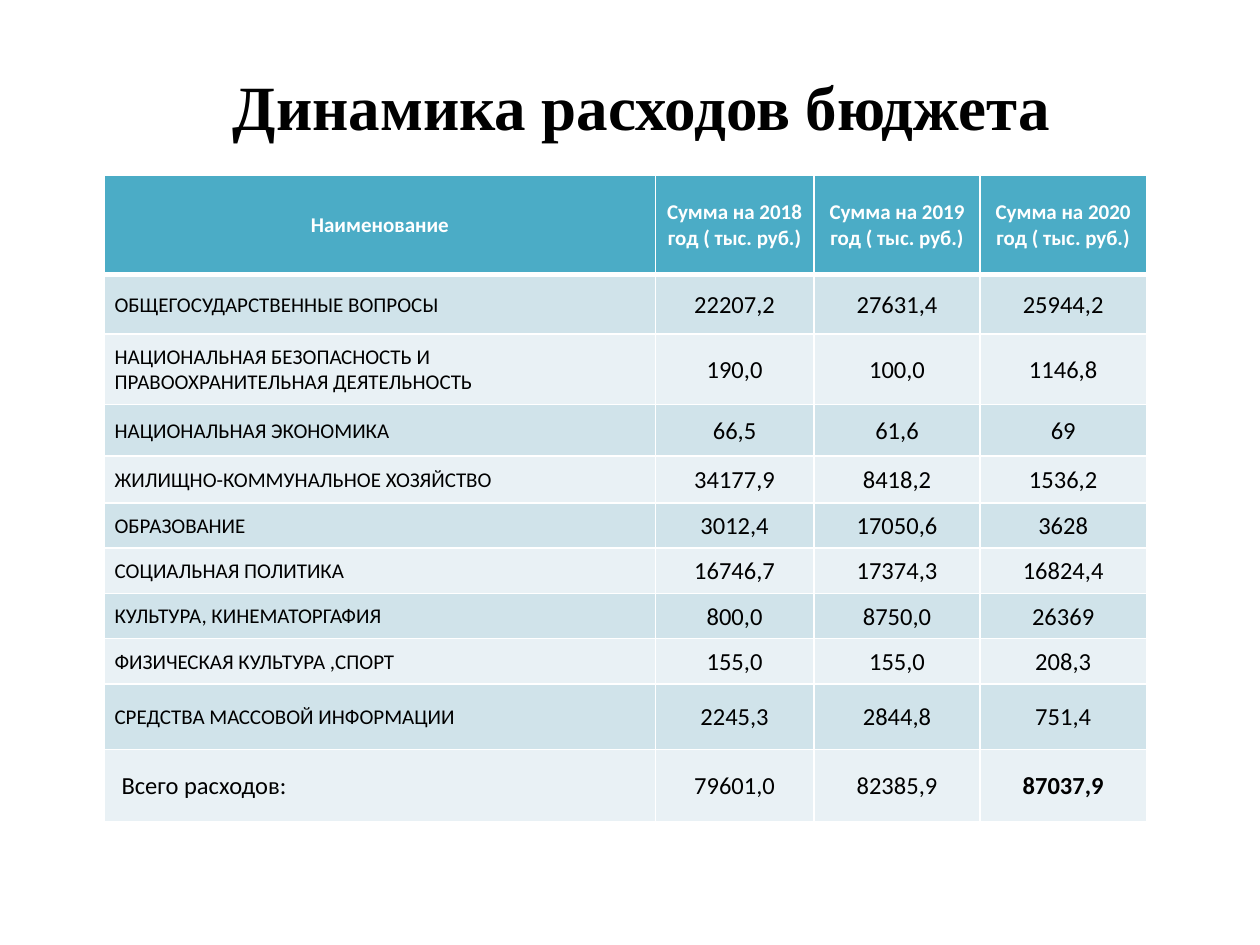
import lxml.etree
import pptx
import pptx.dml.color
import pptx.enum.text
import pptx.oxml.ns
import pptx.util

Cm, Pt = pptx.util.Cm, pptx.util.Pt
ALIGN = pptx.enum.text.PP_ALIGN
MIDDLE = pptx.enum.text.MSO_ANCHOR.MIDDLE

HEADER = ["Наименование"] + [f"Сумма на {year} год ( тыс. руб.)" for year in (2018, 2019, 2020)]
EXPENSES = [
    ("ОБЩЕГОСУДАРСТВЕННЫЕ ВОПРОСЫ", "22207,2", "27631,4", "25944,2"),
    ("НАЦИОНАЛЬНАЯ БЕЗОПАСНОСТЬ И\nПРАВООХРАНИТЕЛЬНАЯ ДЕЯТЕЛЬНОСТЬ", "190,0", "100,0", "1146,8"),
    ("НАЦИОНАЛЬНАЯ ЭКОНОМИКА", "66,5", "61,6", "69"),
    ("ЖИЛИЩНО-КОММУНАЛЬНОЕ ХОЗЯЙСТВО", "34177,9", "8418,2", "1536,2"),
    ("ОБРАЗОВАНИЕ", "3012,4", "17050,6", "3628"),
    ("СОЦИАЛЬНАЯ ПОЛИТИКА", "16746,7", "17374,3", "16824,4"),
    ("КУЛЬТУРА, КИНЕМАТОРГАФИЯ", "800,0", "8750,0", "26369"),
    ("ФИЗИЧЕСКАЯ КУЛЬТУРА ,СПОРТ", "155,0", "155,0", "208,3"),
    ("СРЕДСТВА МАССОВОЙ ИНФОРМАЦИИ", "2245,3", "2844,8", "751,4"),
    ("Всего расходов:", "79601,0", "82385,9", "87037,9"),
]
COLUMN_WIDTHS = [11.1, 3.2, 3.35, 3.35]
ROW_HEIGHTS = [2, 1.19, 1.42, 1.04, 0.94, 0.91, 0.91, 0.91, 0.91, 1.32, 1.45]


def color(value):
    """Turn a hex string into a colour."""
    return pptx.dml.color.RGBColor.from_string(value)


def write(frame, text, size, font, ink, bold, align):
    """Write each line of the text as one paragraph with one run."""
    frame.word_wrap = True
    for index, line in enumerate(text.split("\n")):
        para = frame.add_paragraph() if index else frame.paragraphs[0]
        para.alignment = align
        span = para.add_run()
        span.text = line
        span.font.size = Pt(size)
        span.font.name = font
        span.font.bold = bold
        span.font.color.rgb = color(ink)


def add_borders(cell, top, bottom):
    """Draw white borders with the given top and bottom widths in points."""
    properties = cell._tc.get_or_add_tcPr()
    qn = pptx.oxml.ns.qn
    for side, width in (("L", 1), ("R", 1), ("T", top), ("B", bottom)):
        line = lxml.etree.SubElement(properties, qn(f"a:ln{side}"), w=str(Pt(width)))
        fill = lxml.etree.SubElement(line, qn("a:solidFill"))
        lxml.etree.SubElement(fill, qn("a:srgbClr"), val="FFFFFF")


def style_cell(cell, row, column, text):
    """Fill one cell according to its place in the table."""
    heading, total = row == 0, row == len(EXPENSES)
    label = column == 0 and not heading
    cell.vertical_anchor = MIDDLE
    cell.margin_left = Cm((0.34 if total else 0.2) if label else 0.03)
    cell.margin_right = cell.margin_top = Cm(0.03)
    cell.margin_bottom = 0
    add_borders(cell, 3 if row == 1 else 1, 3 if heading else 1)
    cell.fill.solid()
    cell.fill.fore_color.rgb = color("4BACC6" if heading else "D0E3EA" if row % 2 else "E9F1F5")
    size = 12 if heading or (label and not total) else 14
    bold = heading or (total and column == len(HEADER) - 1)
    ink = "FFFFFF" if heading else "000000"
    write(cell.text_frame, text, size, "Calibri", ink, bold, ALIGN.LEFT if label else ALIGN.CENTER)


def add_title(page, left, top, width, height):
    """Place the slide title in the given box."""
    box = page.shapes.add_textbox(Cm(left), Cm(top), Cm(width), Cm(height))
    box.text_frame.vertical_anchor = MIDDLE
    write(box.text_frame, "Динамика расходов бюджета", 36, "Times New Roman", "000000", True, ALIGN.CENTER)


def add_expense_table(page, left, top, width, height):
    """Place the expense table, its rows and columns scaled to the given box."""
    rows = [HEADER, *EXPENSES]
    frame = page.shapes.add_table(len(rows), len(HEADER), Cm(left), Cm(top), Cm(width), Cm(height))
    table = frame.table
    for column, share in zip(table.columns, COLUMN_WIDTHS):
        column.width = Cm(width * share / sum(COLUMN_WIDTHS))
    for row, share in zip(table.rows, ROW_HEIGHTS):
        row.height = Cm(height * share / sum(ROW_HEIGHTS))
    for row, texts in enumerate(rows):
        for column, text in enumerate(texts):
            style_cell(table.cell(row, column), row, column, text)


def main():
    """Build and save the slide."""
    deck = pptx.Presentation()
    deck.slide_width, deck.slide_height = Cm(25.4), Cm(19.05)
    page = deck.slides.add_slide(deck.slide_layouts[6])
    add_expense_table(page, 2.11, 3.53, 21, 13.04)
    add_title(page, 1.5, 0.53, 22.86, 3.18)
    deck.save("out.pptx")


if __name__ == "__main__":
    main()
